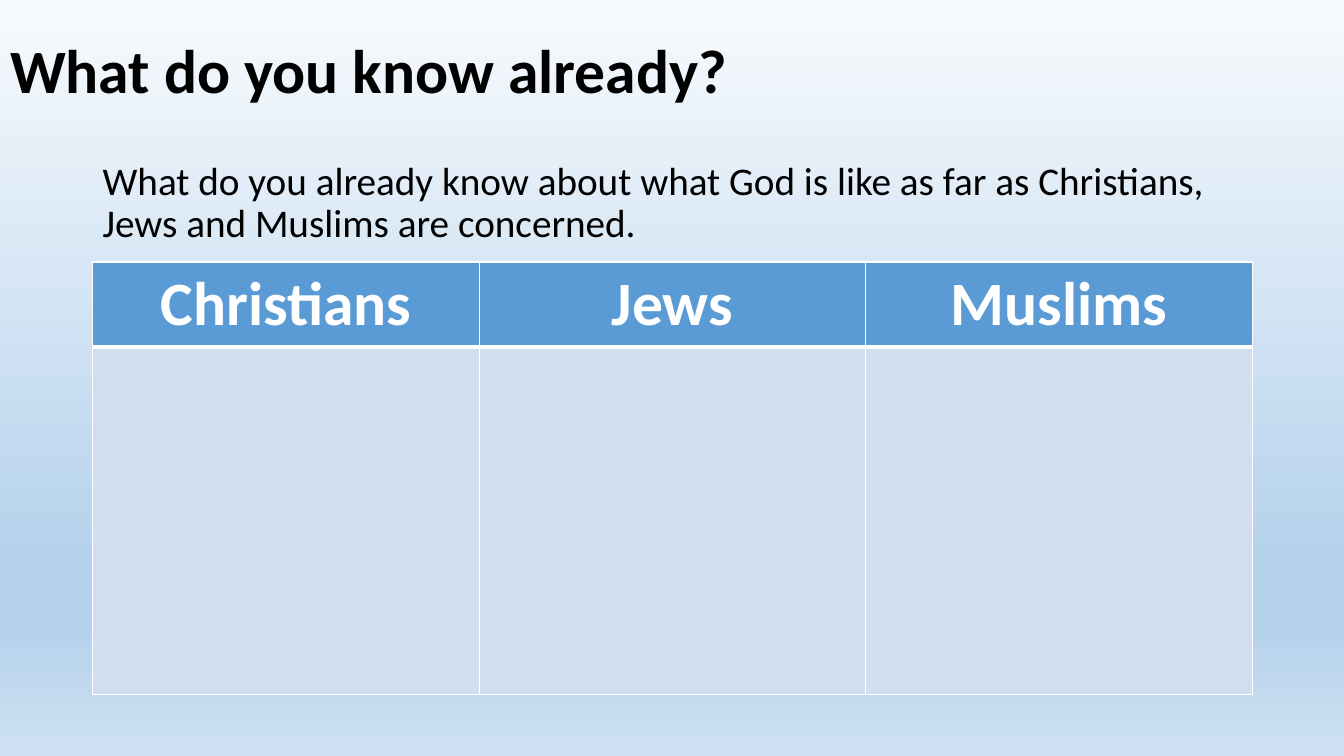
import pptx
import pptx.util
import pptx.dml.color
import pptx.enum.text
import pptx.oxml
import pptx.oxml.ns
from pptx.util import Inches

COLORS = {
    "text": "000000",
    "white": "FFFFFF",
    "header": "5B9BD5",
    "body": "D2DEEF",
}
BACKGROUND_STOPS = [(0, "F7FAFD"), (74, "B5D2EC"), (83, "B5D2EC"), (100, "CEE1F2")]
FAITHS = ["Christians", "Jews", "Muslims"]


def style(p, size, color, align, bold=False):
    p.font.name = "Calibri"
    p.font.size = pptx.util.Pt(size)
    p.font.bold = bold
    p.font.color.rgb = pptx.dml.color.RGBColor.from_string(COLORS[color])
    p.alignment = align


def add_border(cell, side, width):
    cell._tc.get_or_add_tcPr().append(pptx.oxml.parse_xml(
        f'<a:{side} {pptx.oxml.ns.nsdecls("a")} w="{pptx.util.Pt(width)}">'
        f'<a:solidFill><a:srgbClr val="{COLORS["white"]}"/></a:solidFill></a:{side}>'))


LEFT = pptx.enum.text.PP_ALIGN.LEFT
CENTER = pptx.enum.text.PP_ALIGN.CENTER
MIDDLE = pptx.enum.text.MSO_ANCHOR.MIDDLE

prs = pptx.Presentation()
prs.slide_width, prs.slide_height = Inches(13.33), Inches(7.5)
s = prs.slides.add_slide(prs.slide_layouts[5])

# Background gradient, top to bottom
fill = s.background.fill
fill.gradient()
fill.gradient_angle = 270
stops = s.element.find(".//" + pptx.oxml.ns.qn("a:gsLst"))
for stop in list(stops):
    stops.remove(stop)
for position, color in BACKGROUND_STOPS:
    stops.append(pptx.oxml.parse_xml(
        f'<a:gs {pptx.oxml.ns.nsdecls("a")} pos="{position * 1000}">'
        f'<a:srgbClr val="{color}"/></a:gs>'))

# Title
title = s.shapes.title
title.left, title.top, title.width, title.height = 0, 0, Inches(11.5), Inches(1.45)
tf = title.text_frame
tf.text = "What do you know already?"
tf.vertical_anchor = MIDDLE
p = tf.paragraphs[0]
p.line_spacing = 0.9
style(p, 44, "text", LEFT, bold=True)

# Question
sp = s.shapes.add_textbox(Inches(0.92), Inches(1.55), Inches(11.5), Inches(1))
tf = sp.text_frame
tf.word_wrap = True
p = tf.paragraphs[0]
p.text = ("What do you already know about what God is like as far as Christians, "
          "Jews and Muslims are concerned.")
p.line_spacing = 0.9
p.space_before = pptx.util.Pt(10)
style(p, 28, "text", LEFT)

# Table with one column per faith
table = s.shapes.add_table(2, len(FAITHS), Inches(0.92), Inches(2.6),
                           Inches(11.5), Inches(4.29)).table
table.rows[0].height = Inches(0.84)
table.rows[1].height = Inches(3.45)
for col, faith in enumerate(FAITHS):
    header = table.cell(0, col)
    header.text = faith
    style(header.text_frame.paragraphs[0], 44, "white", CENTER, bold=True)
    for row, (color, bottom) in enumerate([("header", 3), ("body", 1)]):
        cell = table.cell(row, col)
        for side, width in [("lnL", 1), ("lnR", 1), ("lnT", 1 if row == 0 else 3), ("lnB", bottom)]:
            add_border(cell, side, width)
        cell.fill.solid()
        cell.fill.fore_color.rgb = pptx.dml.color.RGBColor.from_string(COLORS[color])

prs.save("out.pptx")
